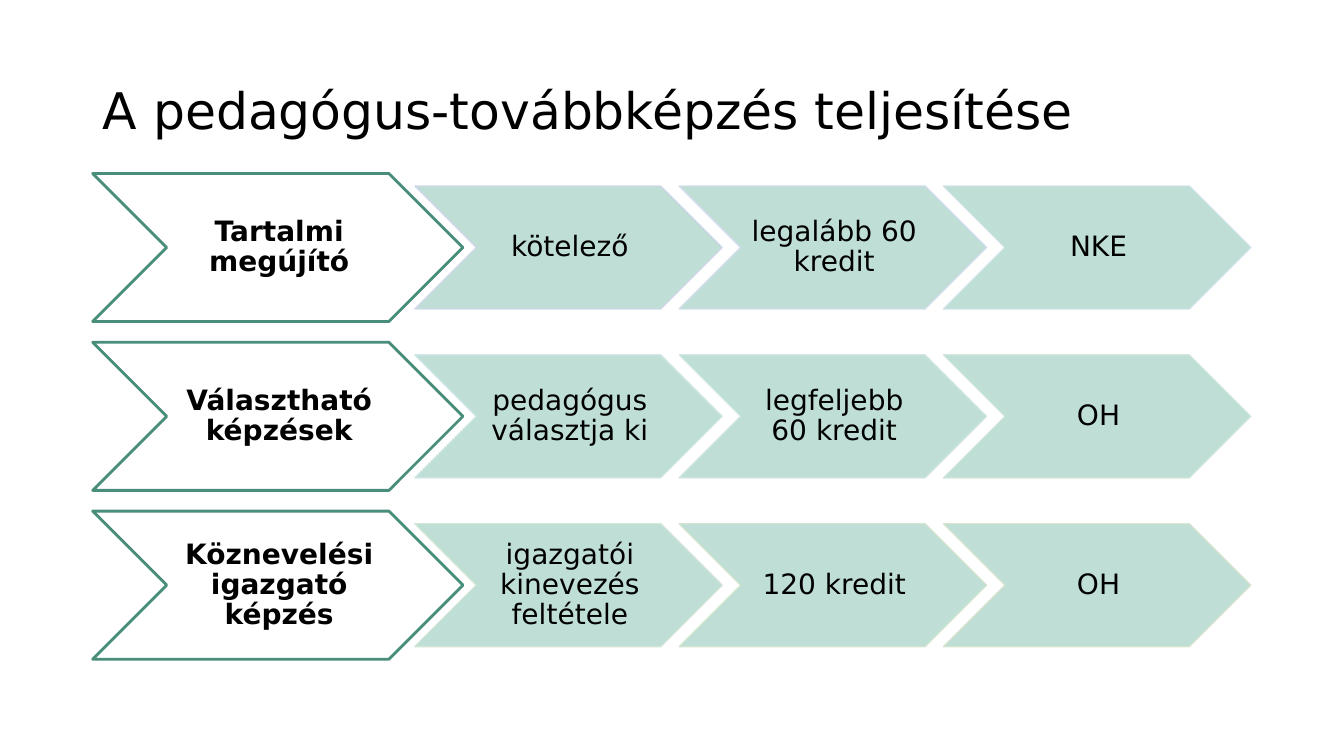
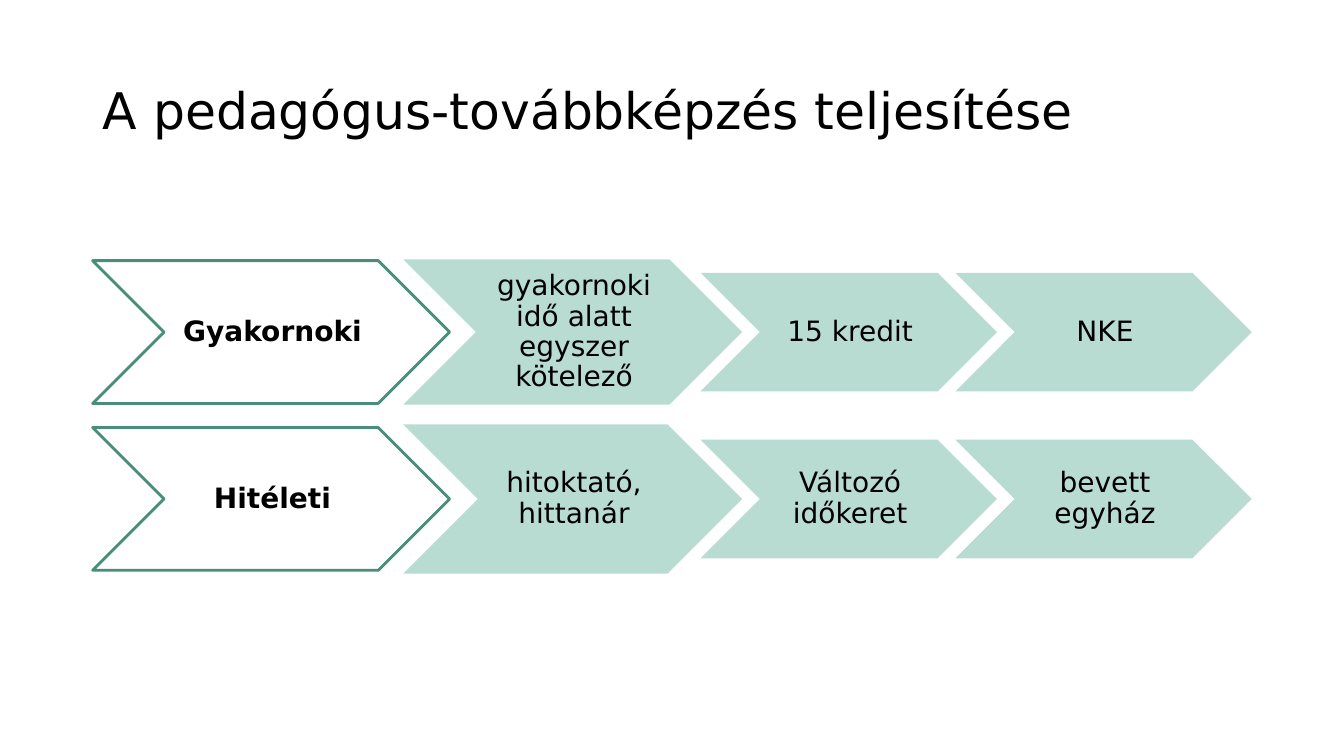
from lxml.etree import SubElement as Sub
from pptx import Presentation as Deck
from pptx.dml.color import RGBColor as Rgb
from pptx.enum.shapes import MSO_SHAPE as Kind
from pptx.enum.text import MSO_ANCHOR as Anchor, MSO_AUTO_SIZE as Fit, PP_ALIGN as Align
from pptx.oxml.ns import qn
from pptx.util import Pt

FONT = "DejaVu Sans"
INK, EDGE, MINT = "000000", "488E7A", "B9DCD2"
TITLE = "A pedagógus-továbbképzés teljesítése"
LEFT = 66.2
RATIO, SCALE = 2.5, 0.83
LEAD_LAP, STEP_LAP = 0.13, 0.14

FIRST = [
    ("Tartalmi megújító", ["kötelező", "legalább 60 kredit", "NKE"],
     ["CFD5EA", "CFDCE9", "CFE2E8"]),
    ("Választható képzések", ["pedagógus választja ki", "legfeljebb 60 kredit", "OH"],
     ["CFE7E7", "CFE6E0", "CFE6DA"]),
    ("Köznevelési igazgató képzés", ["igazgatói kinevezés feltétele", "120 kredit", "OH"],
     ["CFE5D4", "D0E4CF", "D5E3CF"]),
]
SECOND = [
    ("Gyakornoki", ["gyakornoki idő alatt egyszer kötelező", "15 kredit", "NKE"], (242, 103.8)),
    ("Hitéleti", ["hitoktató, hittanár", "Változó időkeret", "bevett egyház"], (242, 106.6)),
]


def tint(code):
    """Return the colour for a hex string."""
    return Rgb.from_string(code)


def style(para, size, align, bold=False):
    """Format a paragraph and its runs."""
    para.alignment = align
    para.line_spacing = 0.9
    for run in para.runs:
        font = run.font
        font.name, font.size, font.bold = FONT, Pt(size), bold
        font.color.rgb = tint(INK)


def head(slide):
    """Place and format the slide title."""
    title = slide.shapes.title
    title.left, title.top, title.width, title.height = Pt(LEFT), Pt(28.8), Pt(828), Pt(104.4)
    frame = title.text_frame
    frame.text = TITLE
    frame.word_wrap, frame.auto_size = True, Fit.NONE
    frame.vertical_anchor = Anchor.MIDDLE
    style(frame.paragraphs[0], 36, Align.LEFT)


def arrow(group, text, left, mid, size, fill=None, edge=None, weight=1, bold=False):
    """Draw one labelled chevron centred on a height."""
    wide, high = size
    shape = group.shapes.add_shape(
        Kind.CHEVRON, Pt(left), Pt(mid - high / 2), Pt(wide), Pt(high))
    shape.shadow.inherit = False
    if fill:
        shape.fill.solid()
        shape.fill.fore_color.rgb = tint(fill)
    else:
        shape.fill.background()
    if edge:
        shape.line.color.rgb = tint(edge)
        shape.line.width = Pt(weight)
    else:
        shape.line.fill.background()
    frame = shape.text_frame
    frame.text = text
    frame.word_wrap, frame.vertical_anchor = True, Anchor.MIDDLE
    frame.margin_left, frame.margin_right = Pt(2), Pt(0)
    frame.margin_top = frame.margin_bottom = Pt(0.8)
    style(frame.paragraphs[0], 20, Align.CENTER, bold)
    return shape


def fade(shape, share):
    """Set the opacity of fill and line in percent."""
    for color in shape.element.spPr.iter(qn("a:srgbClr")):
        Sub(color, qn("a:alpha")).set("val", str(share * 1000))


def chain(slide, left, mid, high, lead, steps, edges=None, broad=None):
    """Draw a lead chevron and its steps from the left edge."""
    group = slide.shapes.add_group_shape()
    wide = high * RATIO
    arrow(group, lead, left, mid, (wide, high), edge=EDGE, weight=2, bold=True)
    small = wide * SCALE, high * SCALE
    sizes = [broad or small, small, small]
    left += wide * (1 - LEAD_LAP)
    for text, size, edge in zip(steps, sizes, edges or [None] * 3):
        shape = arrow(group, text, left, mid, size, MINT, edge)
        if edge:
            fade(shape, 90)
        left += size[0] - small[0] * STEP_LAP


def main():
    """Build and save both slides."""
    deck = Deck()
    deck.slide_width, deck.slide_height = Pt(960), Pt(540)
    one, two = [deck.slides.add_slide(deck.slide_layouts[5]) for _ in range(2)]
    head(one)
    for row, (lead, steps, edges) in enumerate(FIRST):
        chain(one, LEFT, 176.8 + row * 120.6, 105.8, lead, steps, edges=edges)
    head(two)
    for row, (lead, steps, broad) in enumerate(SECOND):
        chain(two, LEFT, 237.2 + row * 119.2, 102, lead, steps, broad=broad)
    deck.save("out.pptx")


if __name__ == "__main__":
    main()
